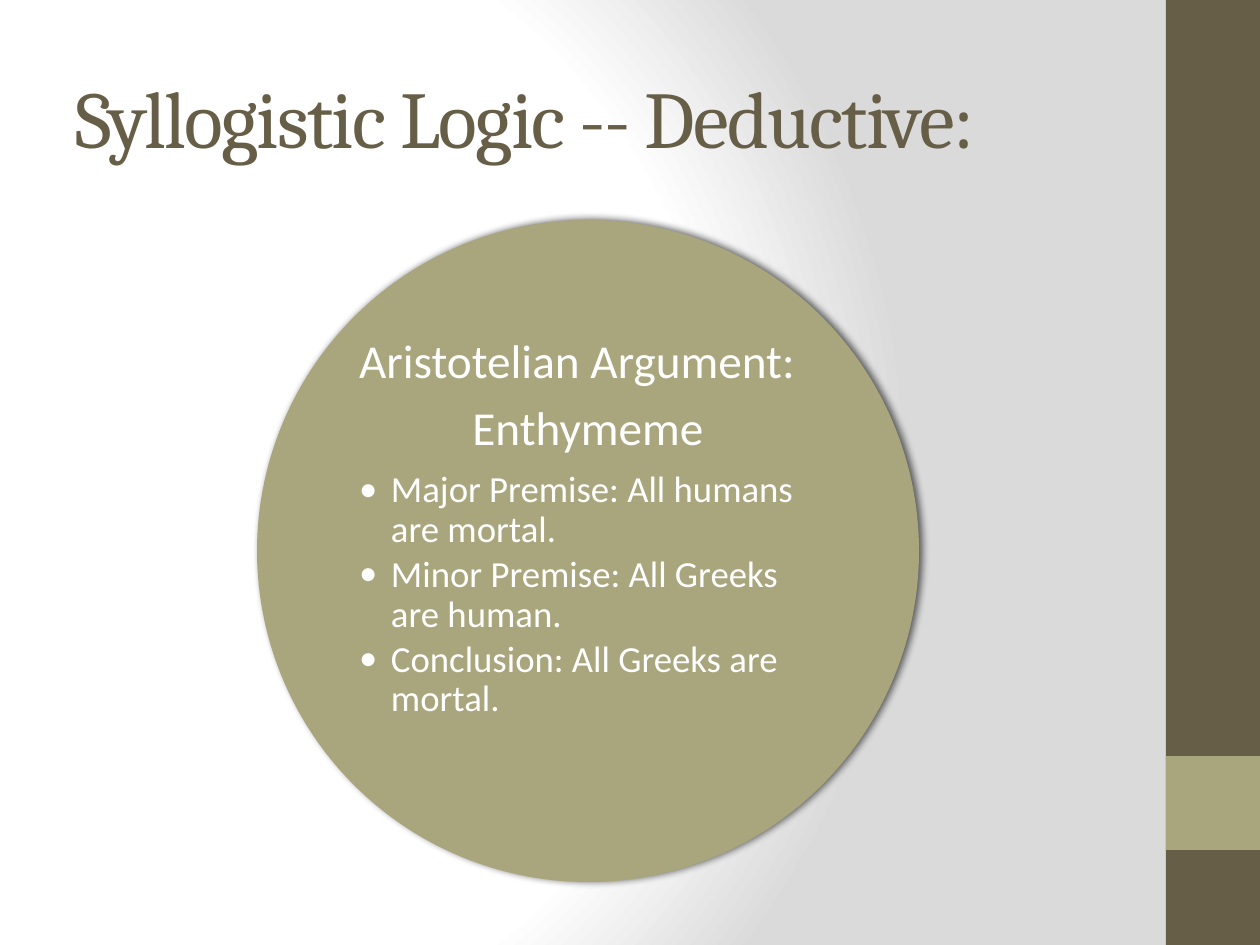
"""Build the Syllogistic Logic slide: a title, a sidebar and a circle of premises."""
from lxml import etree
from pptx import Presentation, util as u
from pptx.dml.color import RGBColor
from pptx.enum import shapes, text
from pptx.oxml import parse_xml
from pptx.oxml.ns import nsdecls, qn

PX = 914400 / 126
COLORS = {"brown": "675E47", "olive": "A9A57C", "white": "FFFFFF", "gray": "DADADA", "black": "000000"}


def px(*lengths):
    return [u.Emu(round(length * PX)) for length in lengths]


def write(para, words, size, font="Calibri", color="white", align=text.PP_ALIGN.LEFT, after=0, line=1.0, bullet=None, hang=0, tracking=0):
    para.alignment = align
    para.line_spacing = line
    para.space_before, para.space_after = u.Pt(0), u.Pt(after)
    span = para.add_run()
    span.text = words
    span.font.size, span.font.name = u.Pt(size), font
    span.font.color.rgb = RGBColor.from_string(COLORS[color])
    if tracking:
        span.font._element.set("spc", str(tracking * 100))
    props = para._p.get_or_add_pPr()
    indent = px(hang)[0]
    props.set("marL", str(indent))
    props.set("indent", str(-indent))
    if bullet:
        etree.SubElement(props, qn("a:buFont")).set("typeface", "Calibri")
        etree.SubElement(props, qn("a:buChar")).set("char", bullet)
    else:
        etree.SubElement(props, qn("a:buNone"))


deck = Presentation()
deck.slide_width, deck.slide_height = px(1260, 945)
page = deck.slides.add_slide(deck.slide_layouts[1])

stops = "".join(
    f'<a:gs pos="{place * 1000}"><a:srgbClr val="{COLORS[name]}"/></a:gs>'
    for place, name in [(0, "white"), (75, "white"), (100, "gray")]
)
page._element.cSld.insert(0, parse_xml(
    f'<p:bg {nsdecls("p", "a")}><p:bgPr><a:gradFill rotWithShape="1"><a:gsLst>{stops}</a:gsLst>'
    '<a:path path="circle"><a:fillToRect l="20000" t="50000" r="100000" b="50000"/></a:path>'
    '</a:gradFill><a:effectLst/></p:bgPr></p:bg>'
))

backdrop = [
    (shapes.MSO_SHAPE.RECTANGLE, (1166, 0, 94, 945), "brown"),
    (shapes.MSO_SHAPE.RECTANGLE, (1166, 756, 94, 94), "olive"),
    (shapes.MSO_SHAPE.OVAL, (257, 220, 662, 662), "olive"),
]
for order, (kind, place, color) in enumerate(backdrop):
    shape = page.shapes.add_shape(kind, *px(*place))
    shape.fill.solid()
    shape.fill.fore_color.rgb = RGBColor.from_string(COLORS[color])
    shape.line.fill.background()
    shape.shadow.inherit = False
    page.shapes._spTree.insert(2 + order, shape._element)

circle = shape
circle._element.spPr.find(qn("a:effectLst")).append(parse_xml(
    f'<a:outerShdw {nsdecls("a")} blurRad="{u.Pt(4)}" dist="{u.Pt(2)}" dir="0" rotWithShape="0">'
    f'<a:srgbClr val="{COLORS["black"]}"><a:alpha val="60000"/></a:srgbClr></a:outerShdw>'
))

title, body = page.shapes.title, page.placeholders[1]
for box, place in [(title, (63, 38, 1050, 157)), (body, (354, 317, 468, 468))]:
    box.left, box.top, box.width, box.height = px(*place)
    box.text_frame.word_wrap = True
    box.text_frame.auto_size = text.MSO_AUTO_SIZE.NONE
    box.text_frame.vertical_anchor = text.MSO_ANCHOR.MIDDLE

write(title.text_frame.paragraphs[0], "Syllogistic Logic -- Deductive:", 46, font="Cambria", color="brown", tracking=-1)

frame = body.text_frame
frame.margin_left, frame.margin_top, frame.margin_right, frame.margin_bottom = px(5, 5, 5, 50)
heading = dict(size=27, after=9, line=0.9)
premise = dict(size=21, after=3, line=0.9, bullet="•", hang=32)
lines = [
    ("Aristotelian Argument:", heading),
    ("Enthymeme", dict(heading, align=text.PP_ALIGN.CENTER)),
    ("Major Premise: All humans are mortal.", premise),
    ("Minor Premise: All Greeks are human.", premise),
    ("Conclusion: All Greeks are mortal.", premise),
]
for index, (words, style) in enumerate(lines):
    para = frame.add_paragraph() if index else frame.paragraphs[0]
    para.level = 1 if "bullet" in style else 0
    write(para, words, **style)

deck.save("out.pptx")
